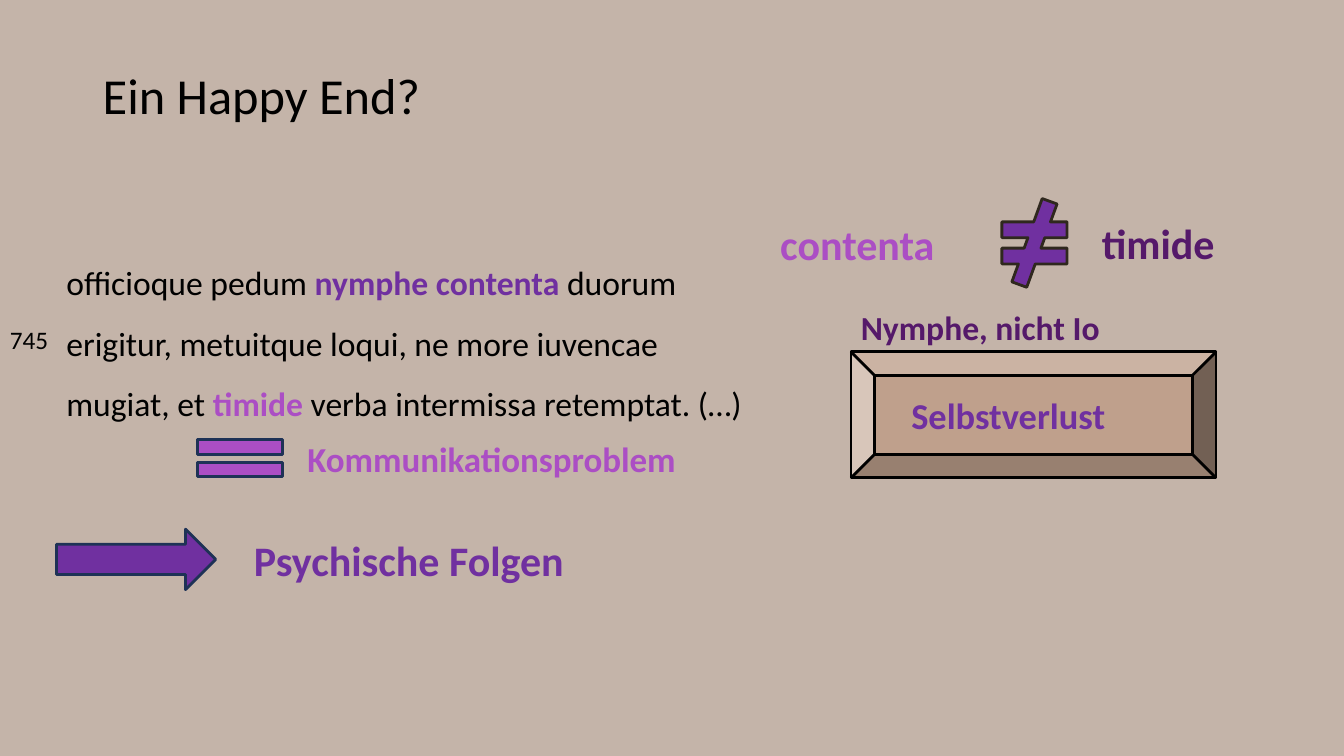
import pptx
import pptx.util
import pptx.dml.color
import pptx.enum.shapes
import pptx.enum.text
from dataclasses import dataclass

Inches = pptx.util.Inches
Pt = pptx.util.Pt
KIND = pptx.enum.shapes.MSO_SHAPE


@dataclass(frozen=True)
class Theme:
    font: str = "Calibri"
    back: str = "C4B4A9"
    ink: str = "000000"
    violet: str = "7030A0"
    orchid: str = "AB4EC4"
    plum: str = "55196A"
    tan: str = "BFA08C"
    navy: str = "1E3256"
    umber: str = "2F281E"
    title: int = 36
    large: int = 30
    medium: int = 26
    note: int = 25
    body: int = 24
    small: int = 18


theme = Theme()


def rgb(code):
    return pptx.dml.color.RGBColor.from_string(code)


def write(box, lines, size, spacing=None):
    """Fill a new text box; each line is a list of (text, colour, bold) runs."""
    frame = slide.shapes.add_textbox(*map(Inches, box)).text_frame
    frame.word_wrap = True
    for i, line in enumerate(lines):
        para = frame.add_paragraph() if i else frame.paragraphs[0]
        para.line_spacing = spacing
        for text, color, bold in line:
            run = para.add_run()
            run.text = text
            run.font.name = theme.font
            run.font.size = Pt(size)
            run.font.bold = bold
            run.font.color.rgb = rgb(color)
    return frame


deck = pptx.Presentation()
deck.slide_width = Inches(13.33)
deck.slide_height = Inches(7.5)
slide = deck.slides.add_slide(deck.slide_layouts[6])
slide.background.fill.solid()
slide.background.fill.fore_color.rgb = rgb(theme.back)

# Symbols and the frame around "Selbstverlust"
symbols = [
    (KIND.BEVEL, (8.44, 3.49, 3.62, 1.25), [0.186], theme.tan, theme.ink),
    (KIND.RIGHT_ARROW, (0.56, 5.25, 1.58, 0.6), [0.5, 0.5], theme.violet, theme.navy),
    (KIND.MATH_EQUAL, (1.81, 4.02, 1.14, 1.05), [0.139, 0.076], theme.orchid, theme.navy),
    (KIND.MATH_NOT_EQUAL, (9.82, 1.97, 0.88, 0.88), [0.178, 66, 0.118],
     theme.violet, theme.umber),
]
for kind, box, adjust, fill, edge in symbols:
    shape = slide.shapes.add_shape(kind, *map(Inches, box))
    shape.shadow.inherit = False
    for i, value in enumerate(adjust):
        shape.adjustments[i] = value
    shape.fill.solid()
    shape.fill.fore_color.rgb = rgb(fill)
    shape.line.color.rgb = rgb(edge)
    shape.line.width = Pt(2)

# Title and Latin verses
title = write((0.92, 0.25, 11.5, 1.45), [[("Ein Happy End?", theme.ink, False)]],
              theme.title, 0.9)
title.vertical_anchor = pptx.enum.text.MSO_ANCHOR.MIDDLE

verses = [
    [("officioque pedum ", theme.ink, False),
     ("nymphe contenta", theme.violet, True),
     (" duorum", theme.ink, False)],
    [("erigitur, metuitque loqui, ne more iuvencae", theme.ink, False)],
    [("mugiat, et ", theme.ink, False),
     ("timide", theme.orchid, True),
     (" verba intermissa retemptat. (…)", theme.ink, False)],
]
write((0.56, 2.35, 8.89, 1.9), verses, theme.body, 1.5)
write((0, 3.17, 2, 0.4), [[("745", theme.ink, False)]], theme.small)

# Bold labels
labels = [
    ("contenta", (7.64, 2.12, 2.82, 0.6), theme.large, theme.orchid),
    ("timide", (10.83, 2.11, 2, 0.6), theme.large, theme.plum),
    ("Nymphe, nicht Io", (8.44, 3, 3.43, 0.5), theme.body, theme.plum),
    ("Selbstverlust", (8.94, 3.85, 3.47, 0.53), theme.medium, theme.violet),
    ("Kommunikationsproblem", (2.95, 4.29, 5.03, 0.51), theme.note, theme.orchid),
    ("Psychische Folgen", (2.42, 5.25, 4.95, 0.6), theme.large, theme.violet),
]
for text, box, size, color in labels:
    write(box, [[(text, color, True)]], size)

deck.save("out.pptx")
